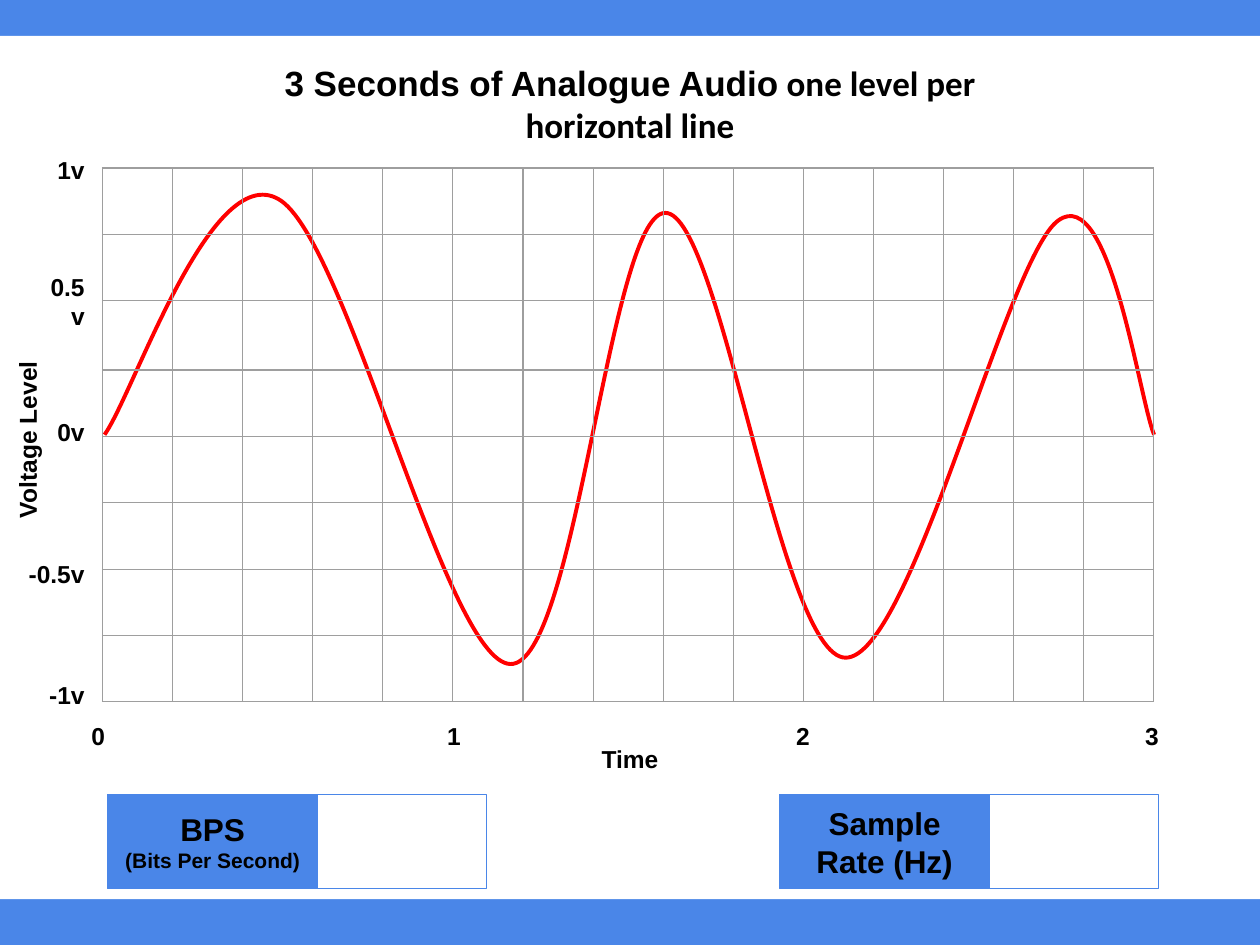
"""Build a worksheet slide with an analogue audio wave over a sampling grid."""
from typing import NamedTuple, Optional

from lxml.etree import SubElement
from pptx import Presentation
from pptx.dml.color import RGBColor
from pptx.enum.shapes import MSO_SHAPE as Preset
from pptx.enum.text import MSO_ANCHOR as Anchor, PP_ALIGN as Align
from pptx.oxml.ns import qn
from pptx.util import Inches, Pt

BLUE = RGBColor(0x4A, 0x86, 0xE8)
WHITE = RGBColor(0xFF, 0xFF, 0xFF)
BLACK = RGBColor(0x00, 0x00, 0x00)
RED = RGBColor(0xFF, 0x00, 0x00)
GREY = RGBColor(0x9E, 0x9E, 0x9E)

SLIDE_WIDTH, SLIDE_HEIGHT = Inches(10), Inches(7.5)
COLUMN, ROW = SLIDE_WIDTH / 100, SLIDE_HEIGHT / 75
GRID_COLUMNS, GRID_ROWS, TALL_ROW = 15, 8, 2


class Box(NamedTuple):
    """Area in slide columns and rows."""
    left: float
    top: float
    width: float
    height: float

    def emu(self) -> tuple:
        """Return the area in slide units."""
        return (round(self.left * COLUMN), round(self.top * ROW),
                round(self.width * COLUMN), round(self.height * ROW))


class Run(NamedTuple):
    """Bold text with its size and font."""
    text: str
    size: int = 14
    font: str = "Arial"


class Label(NamedTuple):
    """Axis label placed on the slide."""
    text: str
    box: Box
    align: Align = Align.LEFT
    rotation: int = 0


class Answer(NamedTuple):
    """Blue caption with an empty answer field to its right."""
    left: float
    lines: list


WAVE_START = (8.3, 34.5)
WAVE = [
    ((10.6, 31.3), (16.7, 12.7), (22.1, 15.8)),
    ((27.5, 18.8), (35.4, 52.5), (40.5, 52.7)),
    ((45.7, 52.9), (48.4, 16.9), (52.8, 16.9)),
    ((57.2, 16.8), (61.9, 52.1), (67.1, 52.2)),
    ((72.3, 52.3), (79.9, 20.4), (84, 17.5)),
    ((88.1, 14.5), (90.4, 31.6), (91.6, 34.5)),
]
GRID = Box(8.13, 13.33, 83.5, 42.4)
TITLE = [Run("3 Seconds of Analogue Audio", 20),
         Run(" one level per horizontal line", 20, "Calibri")]
VOLTAGES = [("1v", 11.5, 4.4), ("0v", 32.3, 4.4), ("-1v", 53.2, 4.9),
            ("0.5v", 21.93, 5.75), ("-0.5v", 43.6, 7.1)]
VOLTAGE_RIGHT = 7.7
SECONDS = [("0", 6.27), ("1", 34.5), ("2", 62.2), ("3", 89.9)]
LABELS = [
    Label("Voltage Level", Box(-5.4, 32.6, 15.1, 3.9), rotation=270),
    *(Label(text, Box(VOLTAGE_RIGHT - width, top, width, 3.9), Align.RIGHT)
      for text, top, width in VOLTAGES),
    *(Label(text, Box(left, 56.4, 3, 3.9)) for text, left in SECONDS),
    Label("Time", Box(42.45, 58.3, 15.1, 3.9), Align.CENTER),
]
ANSWERS = [
    Answer(8.53, [[Run("BPS", 18)], [Run("(Bits Per Second)", 12)]]),
    Answer(61.86, [[Run("Sample Rate (Hz)", 18)]]),
]


def write(shape, lines: list, align: Align) -> None:
    """Fill a shape with lines of runs."""
    frame = shape.text_frame
    frame.word_wrap = True
    frame.vertical_anchor = Anchor.MIDDLE
    frame.margin_left = frame.margin_right = Inches(0.1)
    frame.margin_top = frame.margin_bottom = Inches(0.1)
    for index, line in enumerate(lines):
        paragraph = frame.add_paragraph() if index else frame.paragraphs[0]
        paragraph.alignment = align
        for item in line:
            run = paragraph.add_run()
            run.text = item.text
            run.font.size = Pt(item.size)
            run.font.name = item.font
            run.font.bold = True
            run.font.color.rgb = BLACK


def add_text(slide, box: Box, runs: list, align: Align, rotation: int = 0) -> None:
    """Add a one-paragraph text box."""
    shape = slide.shapes.add_textbox(*box.emu())
    shape.rotation = rotation
    write(shape, [runs], align)


def add_panel(slide, box: Box, fill: RGBColor, line: Optional[RGBColor] = None,
              preset: Preset = Preset.RECTANGLE):
    """Add a flat panel."""
    shape = slide.shapes.add_shape(preset, *box.emu())
    shape.shadow.inherit = False
    shape.fill.solid()
    shape.fill.fore_color.rgb = fill
    if line is None:
        shape.line.fill.background()
    else:
        shape.line.color.rgb = line
        shape.line.width = Pt(0.75)
    return shape


def to_emu(point: tuple) -> tuple:
    """Return a grid point in slide units."""
    return round(point[0] * COLUMN), round(point[1] * ROW)


def add_wave(slide) -> None:
    """Draw the audio wave as an outline of cubic curves."""
    builder = slide.shapes.build_freeform(*to_emu(WAVE_START))
    builder.add_line_segments([to_emu(segment[-1]) for segment in WAVE], close=False)
    wave = builder.convert_to_shape()
    wave.shadow.inherit = False
    wave.fill.background()
    wave.line.color.rgb = RED
    wave.line.width = Pt(2.25)
    for line, segment in zip(list(wave._element.iter(qn("a:lnTo"))), WAVE):
        outline = line.getparent()
        curve = SubElement(outline, qn("a:cubicBezTo"))
        for x, y in map(to_emu, segment):
            SubElement(curve, qn("a:pt"), x=str(x - wave.left), y=str(y - wave.top))
        outline.replace(line, curve)


def add_borders(cell) -> None:
    """Give a clear cell thin grey borders."""
    properties = cell._tc.get_or_add_tcPr()
    for side in ("a:lnL", "a:lnR", "a:lnT", "a:lnB"):
        line = SubElement(properties, qn(side), w=str(Pt(0.75)))
        fill = SubElement(line, qn("a:solidFill"))
        SubElement(fill, qn("a:srgbClr"), val=str(GREY))
    cell.fill.background()


def add_grid(slide) -> None:
    """Add the sampling grid as an empty table."""
    table = slide.shapes.add_table(GRID_ROWS, GRID_COLUMNS, *GRID.emu()).table
    table.first_row = table.horz_banding = False
    tall = 5.5
    normal = (GRID.height - tall) / (GRID_ROWS - 1)
    for column in table.columns:
        column.width = round(GRID.width * COLUMN / GRID_COLUMNS)
    for index, row in enumerate(table.rows):
        row.height = round((tall if index == TALL_ROW else normal) * ROW)
    for cell in table.iter_cells():
        add_borders(cell)


def add_answer(slide, answer: Answer) -> None:
    """Add a caption and its empty field."""
    caption = Box(answer.left, 63.04, 16.7, 7.5)
    field = Box(caption.left + caption.width, caption.top, 13.4, caption.height)
    write(add_panel(slide, caption, BLUE, BLUE), answer.lines, Align.CENTER)
    add_panel(slide, field, WHITE, BLUE)


def main() -> None:
    """Build and save the slide."""
    presentation = Presentation()
    presentation.slide_width, presentation.slide_height = SLIDE_WIDTH, SLIDE_HEIGHT
    slide = presentation.slides.add_slide(presentation.slide_layouts[6])
    slide.background.fill.solid()
    slide.background.fill.fore_color.rgb = BLUE
    page = add_panel(slide, Box(0, 2.85, 100, 68.5), WHITE,
                     preset=Preset.ROUNDED_RECTANGLE)
    page.adjustments[0] = 0
    add_wave(slide)
    add_grid(slide)
    add_text(slide, Box(16.6, 3.1, 66.8, 10.3), TITLE, Align.CENTER)
    for label in LABELS:
        add_text(slide, label.box, [Run(label.text)], label.align, label.rotation)
    for answer in ANSWERS:
        add_answer(slide, answer)
    presentation.save("out.pptx")


if __name__ == "__main__":
    main()
